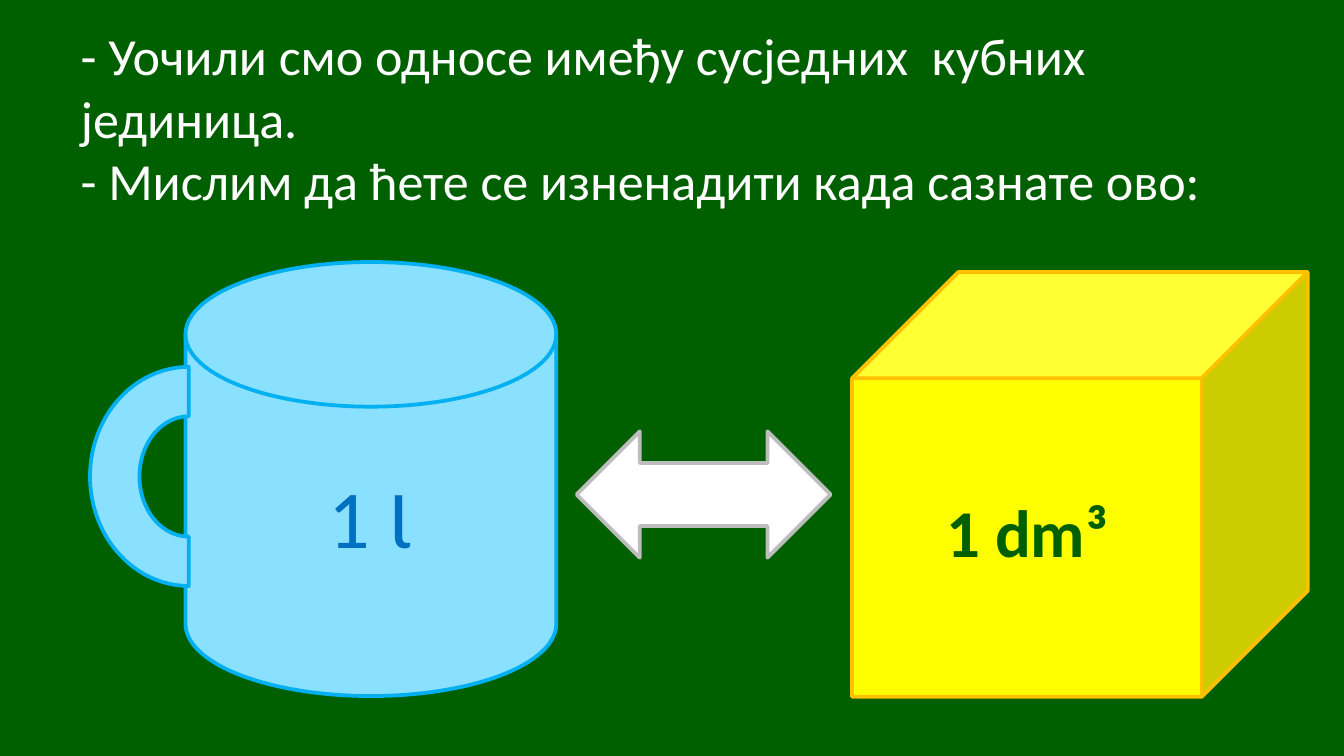
from dataclasses import dataclass

import pptx
import pptx.dml.color
import pptx.enum.shapes
import pptx.enum.text
import pptx.util

SHAPES = pptx.enum.shapes.MSO_SHAPE
ALIGN = pptx.enum.text.PP_ALIGN
CELL = 0.1
COLUMNS, ROWS = 100, 56.25
GREEN, WHITE = "006000", "FFFFFF"
WATER, WATER_EDGE = "89E0FF", "00B0F0"


@dataclass(frozen=True)
class Area:
    column: float
    row: float
    columns: float
    rows: float


@dataclass(frozen=True)
class Label:
    text: str
    size: float
    color: str
    bold: bool = False
    bottom_rows: float = 0.5


@dataclass(frozen=True)
class Figure:
    preset: SHAPES
    area: Area
    fill: str
    edge: str
    label: Label | None = None
    rotation: float = 0


TITLE = Label(
    "- Уочили смо односе имеђу сусједних  кубних јединица.\v"
    "- Мислим да ћете се изненадити када сазнате ово:",
    27.9, WHITE,
)
TITLE_AREA = Area(5, 0.9, 90, 15.7)

FIGURES = [
    Figure(SHAPES.CUBE, Area(63.4, 20.25, 33.9, 31.6), "FFFF00", "FFC000",
           Label("1 dm³", 35.8, GREEN, True, 1.5)),
    Figure(SHAPES.FLOWCHART_MAGNETIC_DISK, Area(13.8, 19.5, 27.6, 32.3),
           WATER, WATER_EDGE, Label("1 Ɩ", 44, "0070C0")),
    Figure(SHAPES.BLOCK_ARC, Area(5.9, 28.1, 16.3, 14.7),
           WATER, WATER_EDGE, rotation=270),
    Figure(SHAPES.LEFT_RIGHT_ARROW, Area(42.9, 32.1, 18.9, 9.4),
           WHITE, "BDBDBD"),
]


def color(value: str) -> pptx.dml.color.RGBColor:
    return pptx.dml.color.RGBColor.from_string(value)


def cells(count: float) -> pptx.util.Length:
    return pptx.util.Inches(count * CELL)


def box(area: Area) -> tuple:
    return tuple(map(cells, (area.column, area.row, area.columns, area.rows)))


def write(shape, label: Label, alignment: ALIGN) -> None:
    frame = shape.text_frame
    frame.text = label.text
    frame.word_wrap = True
    frame.auto_size = pptx.enum.text.MSO_AUTO_SIZE.NONE
    frame.vertical_anchor = pptx.enum.text.MSO_ANCHOR.MIDDLE
    frame.margin_bottom = cells(label.bottom_rows)
    paragraph = frame.paragraphs[0]
    paragraph.alignment = alignment
    paragraph.font.name = "Calibri"
    paragraph.font.size = pptx.util.Pt(label.size)
    paragraph.font.bold = label.bold
    paragraph.font.color.rgb = color(label.color)


def draw_title(slide) -> None:
    title = slide.shapes.title
    title.left, title.top, title.width, title.height = box(TITLE_AREA)
    write(title, TITLE, ALIGN.LEFT)


def draw_figure(slide, figure: Figure) -> None:
    shape = slide.shapes.add_shape(figure.preset, *box(figure.area))
    shape.rotation = figure.rotation
    shape.shadow.inherit = False
    shape.fill.solid()
    shape.fill.fore_color.rgb = color(figure.fill)
    shape.line.color.rgb = color(figure.edge)
    shape.line.width = pptx.util.Pt(2)
    if figure.label:
        write(shape, figure.label, ALIGN.CENTER)


def main() -> None:
    presentation = pptx.Presentation()
    presentation.slide_width = cells(COLUMNS)
    presentation.slide_height = cells(ROWS)
    layout = presentation.slide_layouts.get_by_name("Title Only")
    slide = presentation.slides.add_slide(layout)
    slide.background.fill.solid()
    slide.background.fill.fore_color.rgb = color(GREEN)
    draw_title(slide)
    for figure in FIGURES:
        draw_figure(slide, figure)
    presentation.save("out.pptx")


if __name__ == "__main__":
    main()
